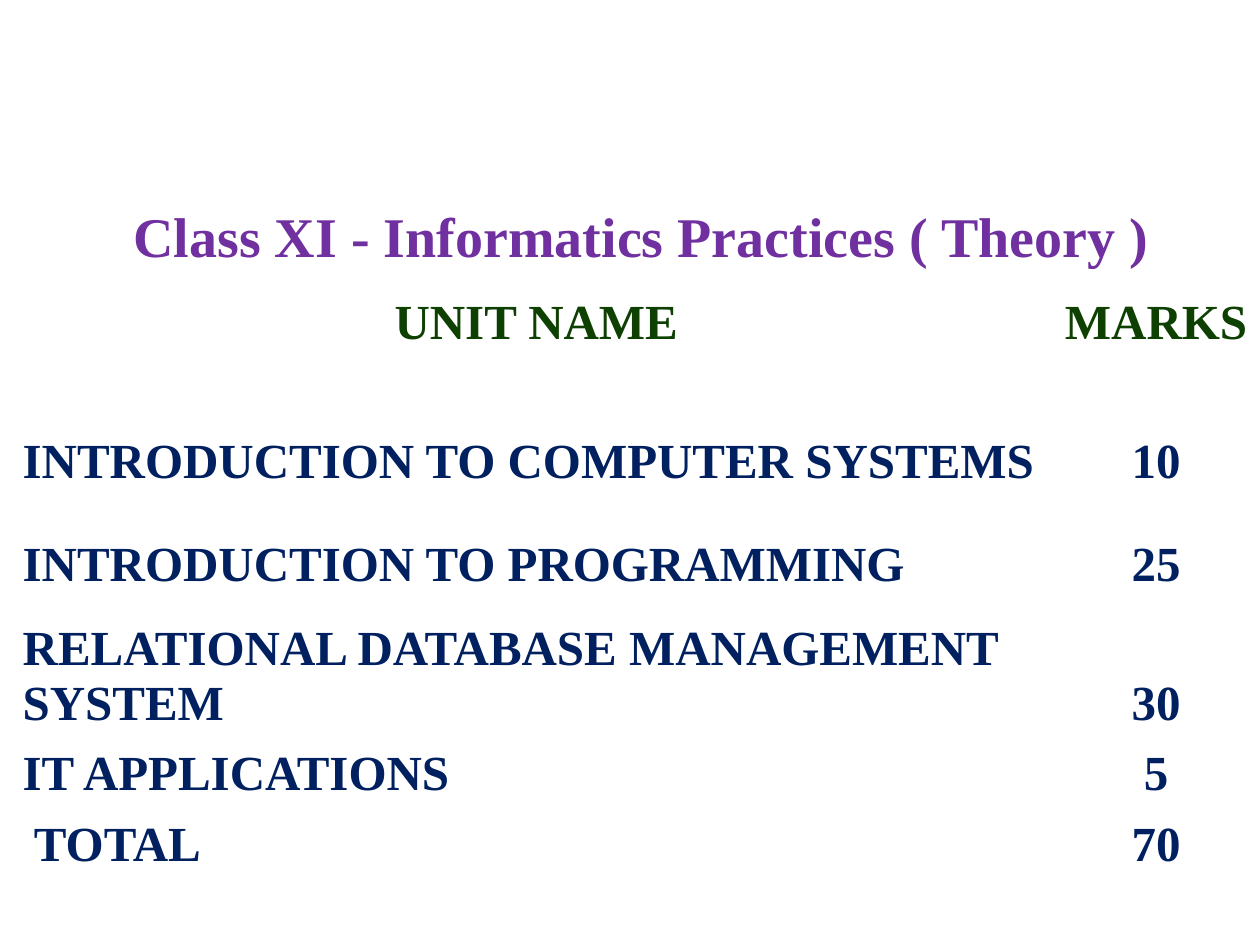
from lxml.etree import SubElement
from pptx import Presentation
from pptx.dml.color import RGBColor
from pptx.enum.text import MSO_ANCHOR, PP_ALIGN
from pptx.oxml.ns import qn
from pptx.util import Inches, Pt

PURPLE = RGBColor(0x70, 0x30, 0xA0)
GREEN = RGBColor(0x0E, 0x40, 0x02)
NAVY = RGBColor(0x00, 0x20, 0x60)
WHITE = RGBColor(0xFF, 0xFF, 0xFF)

COLUMN_WIDTHS = [8.17, 1.67]
ROW_HEIGHTS = [0.64, 0.64, 1.1, 0.82, 1.1, 0.56, 0.56]
ROWS = [
    ("Class XI - Informatics Practices ( Theory )", ""),
    ("UNIT NAME", "MARKS"),
    ("INTRODUCTION TO COMPUTER SYSTEMS", "10"),
    ("INTRODUCTION TO PROGRAMMING", "25"),
    ("RELATIONAL DATABASE MANAGEMENT SYSTEM", "30"),
    ("IT APPLICATIONS", "5"),
    (" TOTAL", "70"),
]
HEADING_COLORS = [PURPLE, GREEN]
CELL_FORMAT = {
    "vertical_anchor": MSO_ANCHOR.BOTTOM,
    "margin_left": Inches(0.01),
    "margin_right": Inches(0.01),
    "margin_top": Inches(0.01),
    "margin_bottom": 0,
}


def add_borders(cell, color):
    properties = cell._tc.get_or_add_tcPr()
    for side in ("a:lnL", "a:lnR", "a:lnT", "a:lnB"):
        line = SubElement(properties, qn(side), w=str(Pt(1)))
        fill = SubElement(line, qn("a:solidFill"))
        SubElement(fill, qn("a:srgbClr"), val=str(color))


# Deck and page
deck = Presentation()
deck.slide_width, deck.slide_height = Inches(10), Inches(7.5)
page = deck.slides.add_slide(deck.slide_layouts[6])

# Marks table
table = page.shapes.add_table(
    len(ROWS), len(COLUMN_WIDTHS), Inches(0.17), Inches(1.5),
    Inches(sum(COLUMN_WIDTHS)), Inches(sum(ROW_HEIGHTS))).table
table.first_row = table.horz_banding = False
for column, width in zip(table.columns, COLUMN_WIDTHS):
    column.width = Inches(width)
for row, height in zip(table.rows, ROW_HEIGHTS):
    row.height = Inches(height)
table.cell(0, 0).merge(table.cell(0, 1))

# Cell wording and formats
for row_index, texts in enumerate(ROWS):
    is_heading = row_index < len(HEADING_COLORS)
    font_format = {"name": "Times New Roman", "bold": True,
                   "size": Pt(32 if row_index == 0 else 28)}
    for column_index, text in enumerate(texts):
        cell = table.cell(row_index, column_index)
        add_borders(cell, WHITE)
        cell.fill.background()
        for name, value in CELL_FORMAT.items():
            setattr(cell, name, value)
        para = cell.text_frame.paragraphs[0]
        centred = is_heading or column_index == 1
        para.alignment = PP_ALIGN.CENTER if centred else PP_ALIGN.LEFT
        if not text:
            continue
        span = para.add_run()
        span.text = text
        for name, value in font_format.items():
            setattr(span.font, name, value)
        span.font.color.rgb = HEADING_COLORS[row_index] if is_heading else NAVY

deck.save("out.pptx")
